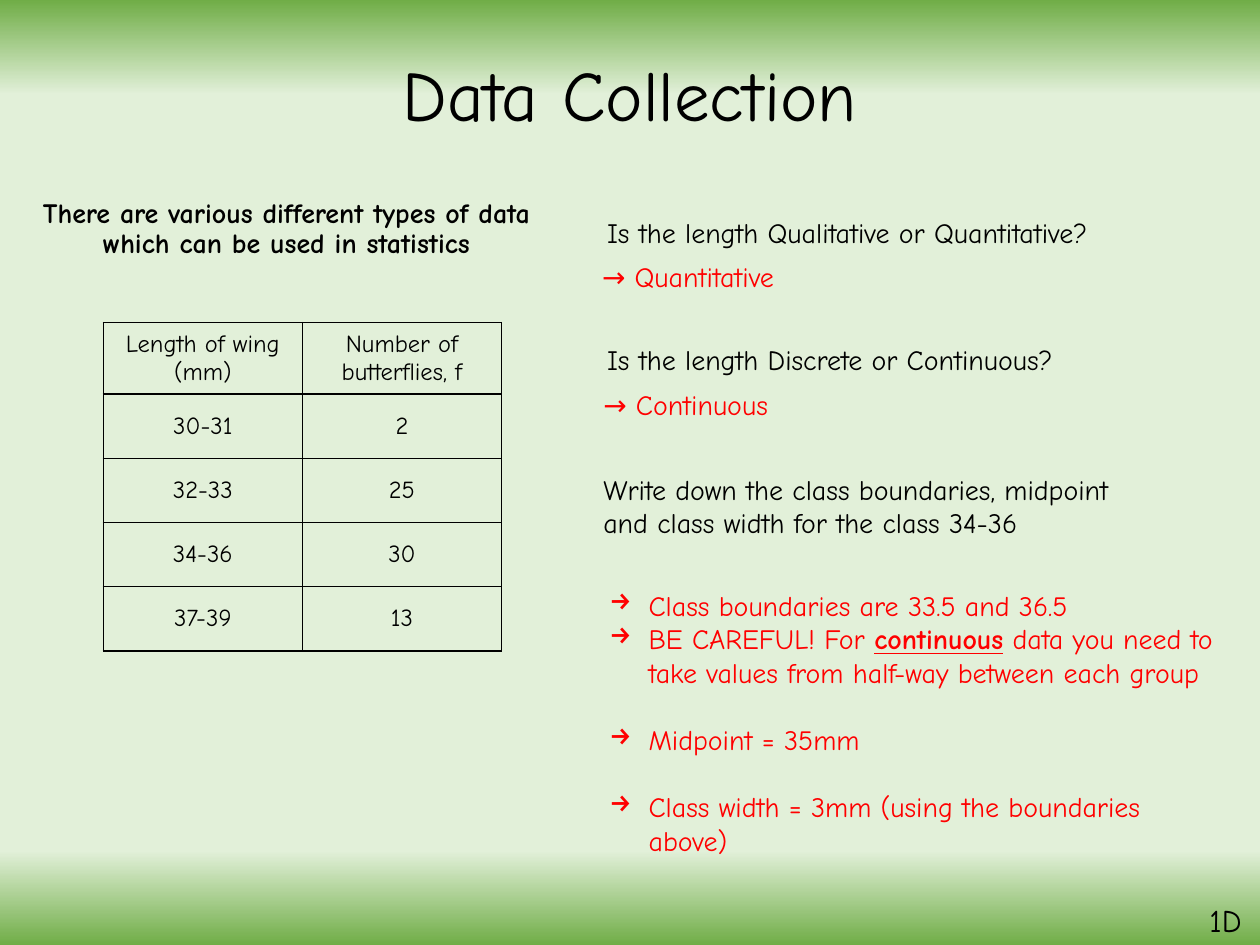
import pptx
import pptx.dml.color
import pptx.enum.text
import pptx.oxml
import pptx.oxml.ns
import pptx.util

Inches = pptx.util.Inches
Pt = pptx.util.Pt
RGBColor = pptx.dml.color.RGBColor
Align = pptx.enum.text.PP_ALIGN
Anchor = pptx.enum.text.MSO_ANCHOR
AutoSize = pptx.enum.text.MSO_AUTO_SIZE
NS = pptx.oxml.ns.nsdecls("a")

BLACK = RGBColor(0x00, 0x00, 0x00)
RED = RGBColor(0xFF, 0x00, 0x00)
GREEN = RGBColor(0x70, 0xAD, 0x47)
PALE_GREEN = RGBColor(0xE2, 0xF0, 0xD9)

presentation = pptx.Presentation()
presentation.slide_width = Inches(10)
presentation.slide_height = Inches(7.5)
slide = presentation.slides.add_slide(presentation.slide_layouts[6])

backdrop = slide.background.fill
backdrop.gradient()
backdrop.gradient_angle = 270
stops = backdrop.gradient_stops
stop_list = slide.element.find(".//" + pptx.oxml.ns.qn("a:gsLst"))
for old_stop in list(stop_list):
    stop_list.remove(old_stop)
for percent, color in [(0, GREEN), (10, PALE_GREEN), (90, PALE_GREEN), (100, GREEN)]:
    stop_list.append(pptx.oxml.parse_xml(
        f'<a:gs {NS} pos="{percent * 1000}"><a:srgbClr val="{color}"/></a:gs>'))


def write(paragraph, text, size=16, color=BLACK, bold=False, underline=False,
          align=Align.LEFT, line_spacing=1.0):
    paragraph.alignment = align
    paragraph.line_spacing = line_spacing
    run = paragraph.add_run()
    run.text = text
    run.font.name = "Comic Neue"
    run.font.size = Pt(size)
    run.font.color.rgb = color
    run.font.bold = bold
    run.font.underline = underline


def add_frame(left, top, width, height, wrap=True, fit=True):
    box = slide.shapes.add_textbox(Inches(left), Inches(top), Inches(width), Inches(height))
    frame = box.text_frame
    frame.word_wrap = wrap
    frame.auto_size = AutoSize.SHAPE_TO_FIT_TEXT if fit else AutoSize.NONE
    return frame


title = add_frame(0.69, 0.24, 8.62, 1.09, fit=False)
title.vertical_anchor = Anchor.MIDDLE
write(title.paragraphs[0], "Data Collection", size=40.5, align=Align.CENTER, line_spacing=0.9)

intro = add_frame(0.16, 1.53, 4.23, 5.22, fit=False)
write(intro.paragraphs[0],
      "There are various different types of data which can be used in statistics",
      bold=True, align=Align.CENTER, line_spacing=0.9)

section = add_frame(9.5, 7.1, 0.5, 0.4, wrap=False)
write(section.paragraphs[0], "1D", size=18)

wing_lengths = [
    ("Length of wing (mm)", "Number of butterflies, f"),
    ("30-31", "2"),
    ("32-33", "25"),
    ("34-36", "30"),
    ("37-39", "13"),
]
table = slide.shapes.add_table(len(wing_lengths), 2, Inches(0.82), Inches(2.56),
                               Inches(3.16), Inches(2.53)).table
table.first_row = False
table.horz_banding = False
for row, values in zip(table.rows, wing_lengths):
    row.height = Inches(0.51)
    for cell, value in zip(row.cells, values):
        cell.vertical_anchor = Anchor.MIDDLE
        write(cell.text_frame.paragraphs[0], value, size=14, align=Align.CENTER)
        cell.fill.background()
        properties = cell._tc.get_or_add_tcPr()
        for position, edge in enumerate(["lnL", "lnR", "lnT", "lnB"]):
            properties.insert(position, pptx.oxml.parse_xml(
                f'<a:{edge} {NS} w="12700"><a:solidFill><a:srgbClr val="{BLACK}"/>'
                f'</a:solidFill></a:{edge}>'))

questions = [
    ("Is the length Qualitative or Quantitative?", BLACK, 4.72, 1.66, 4.63, 0.37, False),
    ("→ Quantitative", RED, 4.68, 2.01, 1.82, 0.37, False),
    ("Is the length Discrete or Continuous?", BLACK, 4.72, 2.67, 4.13, 0.37, False),
    ("→ Continuous", RED, 4.69, 3.03, 1.6, 0.37, False),
    ("Write down the class boundaries, midpoint and class width for the class 34-36",
     BLACK, 4.69, 3.7, 4.59, 0.91, True),
]
for text, color, left, top, width, height, wrap in questions:
    write(add_frame(left, top, width, height, wrap).paragraphs[0], text, color=color)

answers = [
    (0, ["Class boundaries are 33.5 and 36.5"]),
    (0, ["BE CAREFUL! For ", "continuous",
         " data you need to take values from half-way between each group"]),
    (19.2, ["Midpoint = 35mm"]),
    (19.2, ["Class width = 3mm (using the boundaries above)"]),
]
answer_frame = add_frame(4.74, 4.62, 5.07, 2.52)
for index, (gap, parts) in enumerate(answers):
    answer = answer_frame.add_paragraph() if index else answer_frame.paragraphs[0]
    indent = answer._p.get_or_add_pPr()
    indent.set("marL", str(Inches(0.31)))
    indent.set("indent", str(-Inches(0.31)))
    indent.append(pptx.oxml.parse_xml(f'<a:buChar {NS} char="→"/>'))
    answer.space_before = Pt(gap)
    for part in parts:
        stressed = part == "continuous"
        write(answer, part, color=RED, bold=stressed, underline=stressed)

presentation.save("out.pptx")
